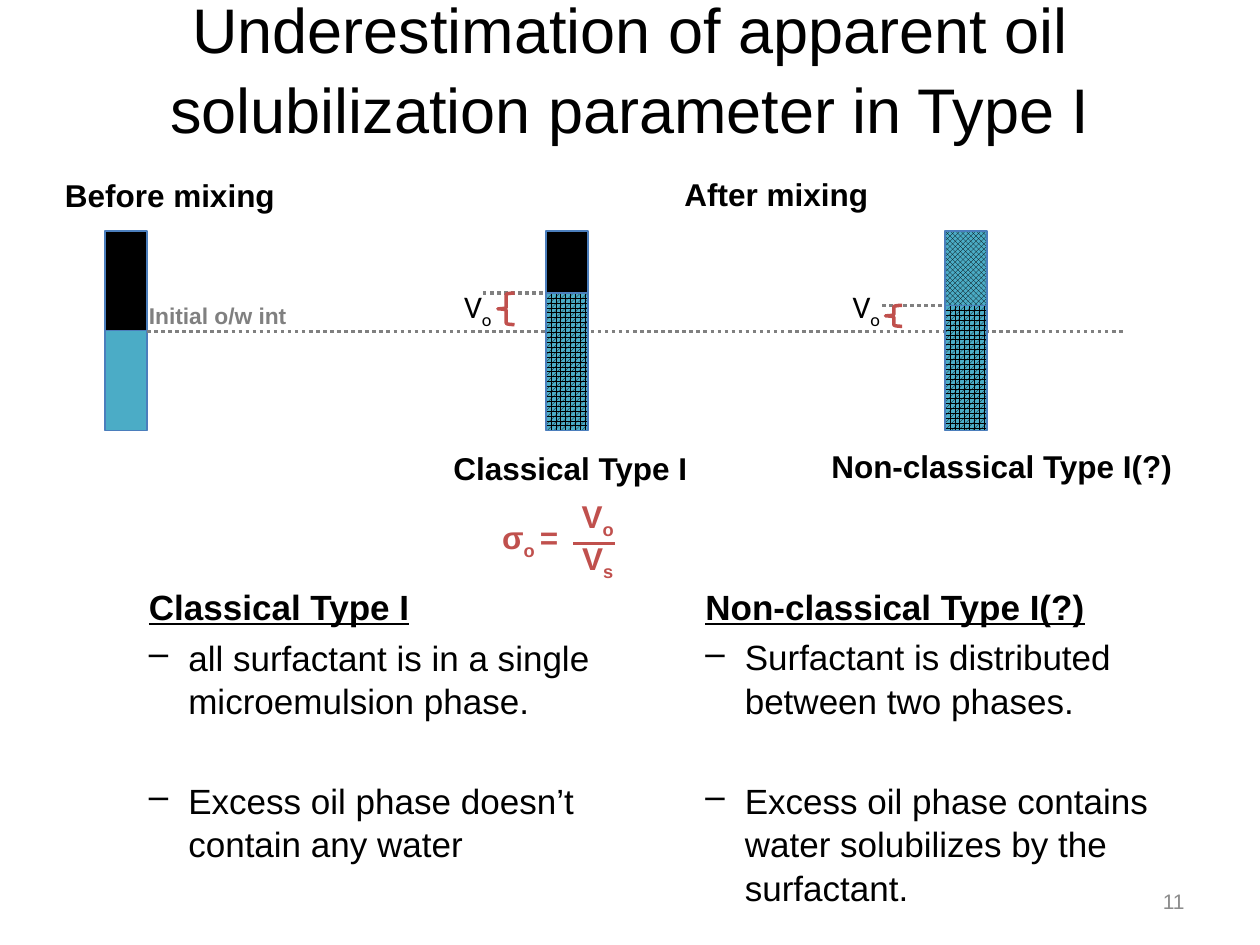
import pptx
import pptx.util
import pptx.dml.color
import pptx.enum.dml
import pptx.enum.shapes
import pptx.enum.text
import lxml.etree
from pptx.oxml.ns import qn

Pt = pptx.util.Pt
Shape = pptx.enum.shapes.MSO_SHAPE
Pattern = pptx.enum.dml.MSO_PATTERN
Align = pptx.enum.text.PP_ALIGN
Anchor = pptx.enum.text.MSO_ANCHOR

BLACK, WATER, OUTLINE, RED, GREY = "000000", "4BACC6", "4B7EBC", "C0504D", "808080"


def rgb(color):
    return pptx.dml.color.RGBColor.from_string(color)


class Deck:
    """Holds the style and the current slide; all lengths are in points."""

    def __init__(self, slide, font="Arial", size=18, line_width=2):
        self.slide, self.font, self.size, self.line_width = slide, font, size, line_width

    def style(self, paragraph, size=None, color=BLACK, bold=False, font=None):
        paragraph.font.name = font or self.font
        paragraph.font.size = Pt(size or self.size)
        paragraph.font.bold = bold
        paragraph.font.color.rgb = rgb(color)

    def title(self, text, left, top, width, height):
        title = self.slide.shapes.title
        title.left, title.top, title.width, title.height = map(Pt, (left, top, width, height))
        title.text_frame.text = text
        title.text_frame.vertical_anchor = Anchor.MIDDLE
        heading = title.text_frame.paragraphs[0]
        heading.alignment = Align.CENTER
        heading.line_spacing = 1.05
        self.style(heading, 36)

    def box(self, left, top, width, height, wrap=False):
        box = self.slide.shapes.add_textbox(Pt(left), Pt(top), Pt(width), Pt(height))
        box.text_frame.word_wrap = wrap
        return box.text_frame

    def label(self, text, left, top, width, height=29, align=Align.LEFT, wrap=False, **style):
        """Add a one-line label; underscores switch subscript on and off."""
        frame = self.box(left, top, width, height, wrap)
        frame.vertical_anchor = Anchor.MIDDLE
        paragraph = frame.paragraphs[0]
        paragraph.alignment = align
        for index, part in enumerate(text.split("_")):
            run = paragraph.add_run()
            run.text = part
            if index % 2:
                run.font._element.set("baseline", "-25000")
        self.style(paragraph, **style)

    def comparison(self, heading, points, left, top, width, height):
        frame = self.box(left, top, width, height, wrap=True)
        paragraph = frame.paragraphs[0]
        paragraph.text = heading
        paragraph.line_spacing = 1.04
        self.style(paragraph, 20, bold=True)
        paragraph.font.underline = True
        for point, gap in zip(points, (4, 32)):
            paragraph = frame.add_paragraph()
            paragraph.text = point
            paragraph.line_spacing = 1.04
            paragraph.space_before = Pt(gap)
            properties = paragraph._p.get_or_add_pPr()
            properties.set("marL", str(Pt(22.5)))
            properties.set("indent", str(-Pt(22.5)))
            lxml.etree.SubElement(properties, qn("a:buChar")).set("char", "–")
            self.style(paragraph, 20)

    def layer(self, left, top, width, height, color, pattern=None):
        layer = self.slide.shapes.add_shape(
            Shape.RECTANGLE, Pt(left), Pt(top), Pt(width), Pt(height))
        layer.shadow.inherit = False
        if pattern is None:
            layer.fill.solid()
            layer.fill.fore_color.rgb = rgb(color)
        else:
            layer.fill.patterned()
            layer.fill.pattern = pattern
            layer.fill.fore_color.rgb = rgb(BLACK)
            layer.fill.back_color.rgb = rgb(color)
        layer.line.color.rgb = rgb(OUTLINE)
        layer.line.width = Pt(0.75)

    def brace(self, left, top, width, height):
        brace = self.slide.shapes.add_shape(
            Shape.LEFT_BRACE, Pt(left), Pt(top), Pt(width), Pt(height))
        brace.shadow.inherit = False
        brace.fill.background()
        brace.line.color.rgb = rgb(RED)
        brace.line.width = Pt(self.line_width)

    def rule(self, start, end, y, color, dotted=False):
        rule = self.slide.shapes.add_connector(
            pptx.enum.shapes.MSO_CONNECTOR.STRAIGHT, Pt(start), Pt(y), Pt(end), Pt(y))
        rule.line.color.rgb = rgb(color)
        rule.line.width = Pt(self.line_width)
        if dotted:
            rule.line.dash_style = pptx.enum.dml.MSO_LINE.ROUND_DOT
        lxml.etree.SubElement(rule._element.spPr, qn("a:effectLst"))


TUBE_TOP, TUBE_BOTTOM, TUBE_WIDTH = 132, 246, 24
INITIAL = 189


def tube(deck, left, interface, upper, lower):
    """Draw a tube whose two layers meet at the interface."""
    deck.layer(left, TUBE_TOP, TUBE_WIDTH, interface - TUBE_TOP, *upper)
    deck.layer(left, interface, TUBE_WIDTH, TUBE_BOTTOM - interface, *lower)


def mixed_tube(deck, left, interface, upper, brace_left, brace_height, label_left):
    """Draw a tube after mixing, with its oil volume marked."""
    tube(deck, left, interface, upper, (WATER, Pattern.SPHERE))
    deck.rule(left - 36, left, interface, GREY, dotted=True)
    deck.brace(brace_left, interface, 9.5, brace_height)
    deck.label("V_o", label_left, 162, 36, align=Align.RIGHT, wrap=True, font="Calibri")


def main():
    presentation = pptx.Presentation()
    presentation.slide_width, presentation.slide_height = Pt(720), Pt(540)
    deck = Deck(presentation.slides.add_slide(presentation.slide_layouts[5]))

    deck.title("Underestimation of apparent oil solubilization parameter in Type I",
               36, -1.5, 648, 79)
    deck.label("11", 516, 500.5, 168, align=Align.RIGHT, wrap=True, size=12, color="8C8C8C")

    # Tubes before and after mixing
    deck.label("Before mixing", 30, 97, 136, bold=True)
    deck.label("After mixing", 384, 96, 120, bold=True)
    tube(deck, 60, INITIAL, (BLACK,), (WATER,))
    deck.rule(84, 642, INITIAL + 0.5, GREY, dotted=True)
    deck.label("Initial o/w int", 78, 169, 94, 23, size=13, color=GREY, bold=True)
    mixed_tube(deck, 312, 167.5, (BLACK,), 284.5, 18, 252)
    mixed_tube(deck, 540, 174.5, (WATER, Pattern.TRELLIS), 506, 12, 474)
    deck.label("Classical Type I", 252, 253, 150, bold=True)
    deck.label("Non-classical Type I(?)", 468, 252, 211, bold=True)

    # Solubilization parameter as a fraction
    formula = {"color": RED, "bold": True}
    deck.label("σ_o _=", 276, 294, 54, align=Align.CENTER, wrap=True, **formula)
    deck.label("V_o", 324, 282, 35, align=Align.CENTER, **formula)
    deck.label("V_s", 325.5, 306, 34.5, **formula)
    deck.rule(327.5, 351.5, 310.5, RED)

    # Comparison of the two types
    deck.comparison("Classical Type I",
                    ("all surfactant is in a single microemulsion phase.",
                     "Excess oil phase doesn’t contain any water"),
                    78, 330, 306, 167)
    deck.comparison("Non-classical Type I(?)",
                    ("Surfactant is distributed between two phases.",
                     "Excess oil phase contains water solubilizes by the surfactant."),
                    396, 330, 306, 191)

    presentation.save("out.pptx")


if __name__ == "__main__":
    main()
